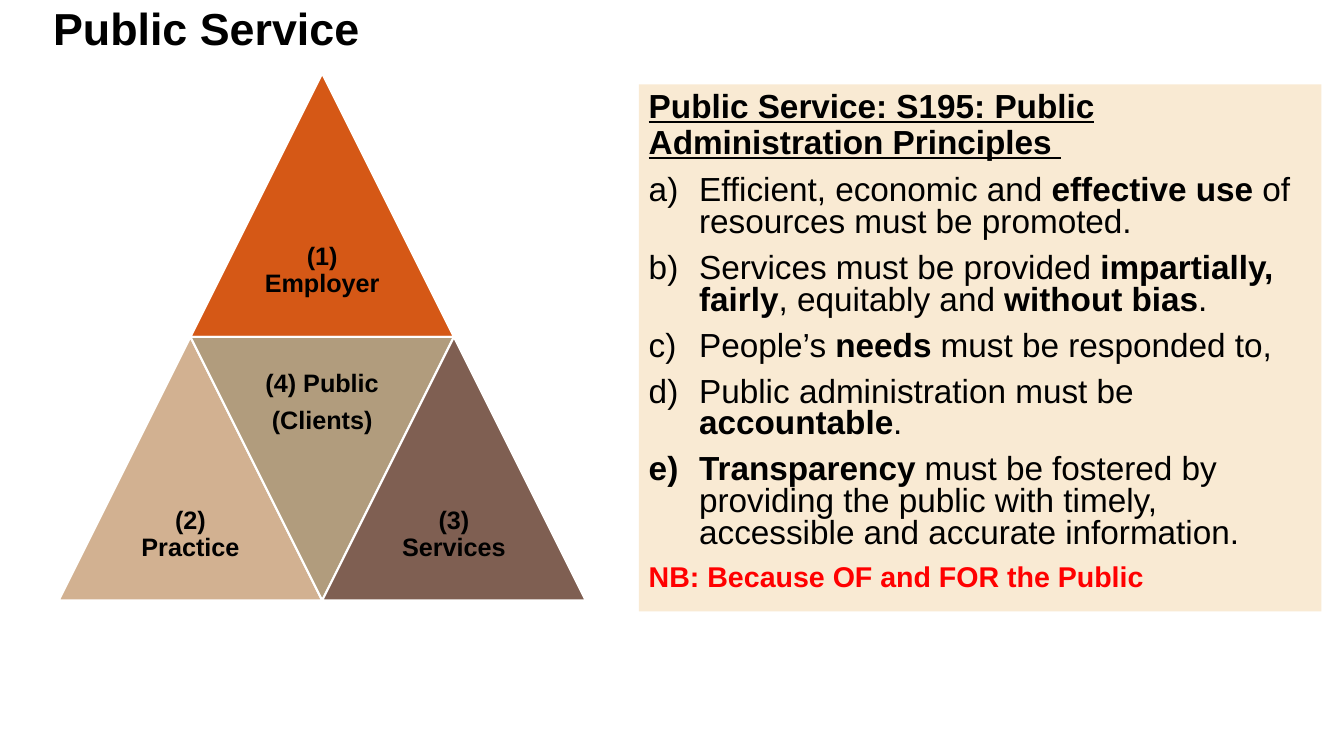
from dataclasses import dataclass

from lxml.etree import SubElement
from pptx import Presentation
from pptx.dml.color import RGBColor
from pptx.enum.shapes import MSO_SHAPE
from pptx.enum.text import MSO_ANCHOR, PP_ALIGN
from pptx.oxml.ns import qn
from pptx.util import Cm, Pt


@dataclass(frozen=True)
class Theme:
    """Colours, font and type sizes of the slide."""
    font: str = "Arial"
    ink: str = "000000"
    edge: str = "FFFFFF"
    panel: str = "F9EAD3"
    alert: str = "FF0000"
    employer: str = "D55816"
    practice: str = "D2B191"
    public: str = "B19C7D"
    services: str = "7F5F52"
    title: float = 32
    body: float = 23.8
    note: float = 20.4
    label: float = 18


THEME = Theme()


def add_run(p, text, size, color=THEME.ink, bold=False, underline=False):
    """Append a formatted run to a paragraph."""
    r = p.add_run()
    r.text = text
    r.font.name = THEME.font
    r.font.size = Pt(size)
    r.font.bold = bold
    r.font.underline = underline
    r.font.color.rgb = RGBColor.from_string(color)


class Deck:
    """Hold the theme and the current slide."""

    def __init__(self, theme):
        """Open a widescreen presentation with one blank slide."""
        self.theme = theme
        self.prs = Presentation()
        self.prs.slide_width, self.prs.slide_height = Cm(33.87), Cm(19.05)
        self.s = self.prs.slides.add_slide(self.prs.slide_layouts[6])

    def shape(self, kind, x, y, w, h, fill):
        """Add a flat filled shape without an outline."""
        sp = self.s.shapes.add_shape(kind, Cm(x), Cm(y), Cm(w), Cm(h))
        sp.shadow.inherit = False
        sp.fill.solid()
        sp.fill.fore_color.rgb = RGBColor.from_string(fill)
        sp.line.fill.background()
        return sp

    def text(self, x, y, w, h, lines, size, align=PP_ALIGN.LEFT, after=0, inset=None):
        """Add a bold, vertically centred text box."""
        tf = self.s.shapes.add_textbox(Cm(x), Cm(y), Cm(w), Cm(h)).text_frame
        tf.word_wrap = True
        tf.vertical_anchor = MSO_ANCHOR.MIDDLE
        if inset is not None:
            tf.margin_left = tf.margin_right = Cm(inset)
            tf.margin_top = tf.margin_bottom = Cm(inset)
        for i, line in enumerate(lines):
            p = tf.add_paragraph() if i else tf.paragraphs[0]
            p.alignment = align
            p.line_spacing = 0.9
            p.space_after = Pt(after)
            add_run(p, line, size, bold=True)

    def triangle(self, x, y, side, fill, lines, inverted=False):
        """Add a triangle with a label in its widest half."""
        sp = self.shape(MSO_SHAPE.ISOSCELES_TRIANGLE, x, y, side, side, fill)
        sp.line.color.rgb = RGBColor.from_string(self.theme.edge)
        sp.line.width = Pt(1.5)
        sp.rotation = 180 if inverted else 0
        top = y if inverted else y + side / 2
        self.text(x + side / 4, top, side / 2, side / 2, lines, self.theme.label,
                  align=PP_ALIGN.CENTER, after=7, inset=0.18)

    def panel(self, x, y, w, h, heading, items, note):
        """Add a panel with a heading, a lettered list and a closing note."""
        sp = self.shape(MSO_SHAPE.RECTANGLE, x, y, w, h, self.theme.panel)
        tf = sp.text_frame
        tf.word_wrap = True
        tf.vertical_anchor = MSO_ANCHOR.TOP
        p = tf.paragraphs[0]
        p.alignment = PP_ALIGN.LEFT
        p.line_spacing = 0.9
        add_run(p, heading, self.theme.body, bold=True, underline=True)
        for item in items:
            p = self.entry(tf)
            pPr = p._p.get_or_add_pPr()
            pPr.set("marL", str(Cm(1.27)))
            pPr.set("indent", str(-Cm(1.27)))
            SubElement(pPr, qn("a:buAutoNum"), type="alphaLcParenR")
            for text, bold in item:
                add_run(p, text, self.theme.body, bold=bold)
        add_run(self.entry(tf), note, self.theme.note, self.theme.alert, bold=True)

    def entry(self, tf):
        """Add a tightly set paragraph to the panel."""
        p = tf.add_paragraph()
        p.alignment = PP_ALIGN.LEFT
        p.line_spacing = 0.8
        p.space_before = Pt(10)
        return p


PRINCIPLES = [
    [("Efficient, economic and ", False), ("effective use ", True),
     ("of resources must be promoted.", False)],
    [("Services must be provided ", False), ("impartially, fairly", True),
     (", equitably and ", False), ("without bias", True), (".", False)],
    [("People’s ", False), ("needs", True), (" must be responded to,", False)],
    [("Public administration must be ", False), ("accountable", True), (".", False)],
    [("Transparency", True),
     (" must be fostered by providing the public with timely, "
      "accessible and accurate information.", False)],
]


def main():
    """Build the slide and save it."""
    deck = Deck(THEME)
    deck.text(1.09, 0, 29.21, 1.55, ["Public Service"], THEME.title)

    left, top, side = 1.48, 1.85, 6.64
    parts = [
        (0.5, 0, THEME.employer, ["(1) Employer"], False),
        (0, 1, THEME.practice, ["(2) Practice"], False),
        (0.5, 1, THEME.public, ["(4) Public", "(Clients)"], True),
        (1, 1, THEME.services, ["(3) Services"], False),
    ]
    for col, row, fill, lines, inverted in parts:
        deck.triangle(left + col * side, top + row * side, side, fill, lines, inverted)

    deck.panel(16.1, 2.13, 17.2, 13.28,
               "Public Service: S195: Public Administration Principles ",
               PRINCIPLES, "NB: Because OF and FOR the Public")
    deck.prs.save("out.pptx")


if __name__ == "__main__":
    main()
